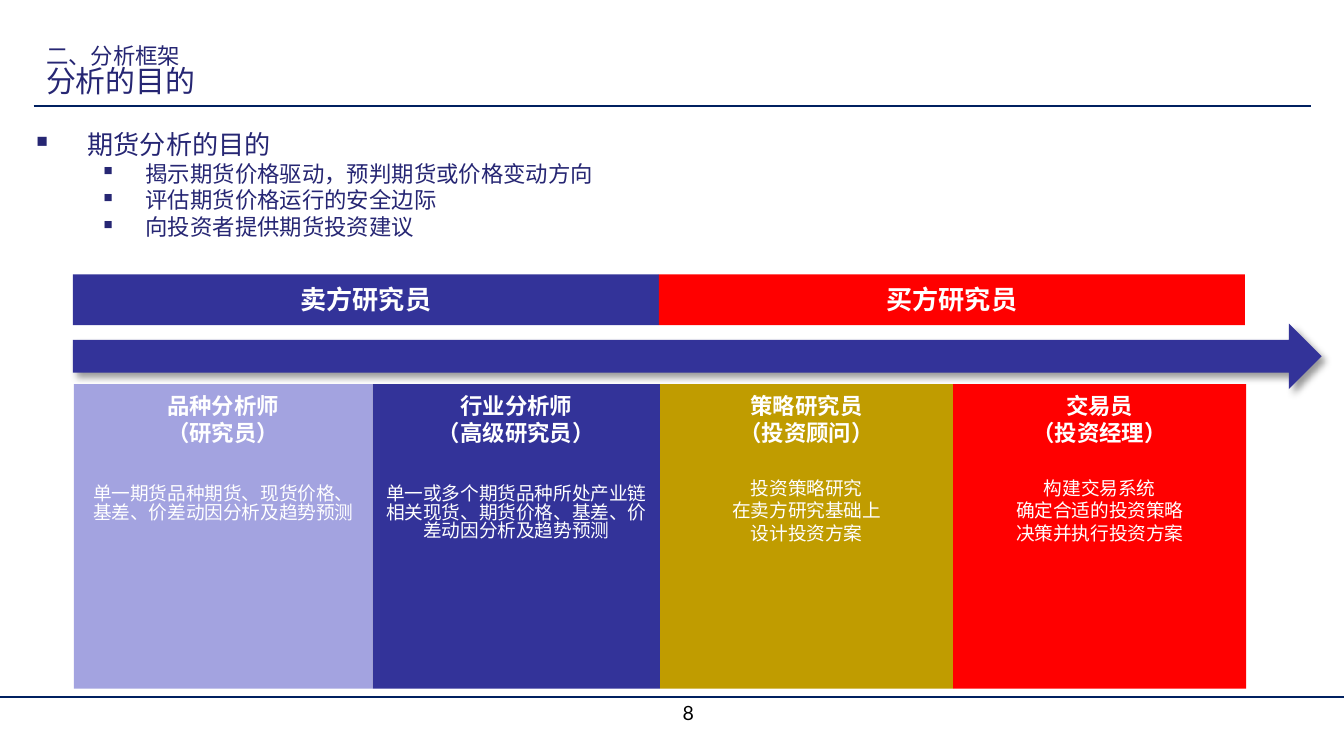
from lxml.etree import SubElement
from pptx import Presentation
from pptx.dml.color import RGBColor
from pptx.enum.shapes import MSO_CONNECTOR as Connector, MSO_SHAPE as Shape
from pptx.enum.text import MSO_ANCHOR as Anchor, PP_ALIGN as Align
from pptx.oxml.ns import qn
from pptx.util import Pt

COLORS = {
    "ink": "262673", "rule": "002060", "indigo": "333399", "lilac": "A3A3E0",
    "gold": "C09C00", "red": "FF0000", "white": "FFFFFF", "black": "000000",
}
FONT = "Noto Sans CJK SC"
LINE_SPACING = 0.83


def style(font, size, color, bold=False, name=FONT):
    font.size, font.bold = Pt(size), bold
    font.color.rgb = RGBColor.from_string(COLORS[color])
    font.name = name
    SubElement(font._rPr, qn("a:ea")).set("typeface", name)


def add_block(kind, left, top, width, height, color):
    block = slide.shapes.add_shape(kind, Pt(left), Pt(top), Pt(width), Pt(height))
    block.shadow.inherit = False
    block.fill.solid()
    block.fill.fore_color.rgb = RGBColor.from_string(COLORS[color])
    block.line.fill.background()
    return block


prs = Presentation()
prs.slide_width, prs.slide_height = Pt(720), Pt(405)
slide = prs.slides.add_slide(prs.slide_layouts[5])

# Rules under the title and above the footer
for start, end, y in [(0, 720, 373.5), (18, 702.5, 56.6)]:
    rule = slide.shapes.add_connector(Connector.STRAIGHT, Pt(start), Pt(y), Pt(end), Pt(y))
    rule.line.width = Pt(1)
    rule.line.color.rgb = RGBColor.from_string(COLORS["rule"])
    SubElement(rule._element.spPr, qn("a:effectLst"))

# Title
title = slide.shapes.title
title.left, title.top, title.width, title.height = Pt(17.5), Pt(10.8), Pt(599), Pt(44.6)
title_frame = title.text_frame
title_frame.vertical_anchor = Anchor.BOTTOM
title_frame.margin_bottom = Pt(2.4)
heading = title_frame.paragraphs[0]
heading.alignment = Align.LEFT
heading.line_spacing = LINE_SPACING
section = heading.add_run()
section.text = "二、分析框架"
style(section.font, 12, "ink")
heading.add_line_break()
topic = heading.add_run()
topic.text = "分析的目的"
style(topic.font, 16, "ink")

# Purposes: text, level
purposes = [
    ("期货分析的目的", 0),
    ("揭示期货价格驱动，预判期货或价格变动方向", 1),
    ("评估期货价格运行的安全边际", 1),
    ("向投资者提供期货投资建议", 1),
]
# Level: size, left margin, hanging indent, bullet percent
levels = [(14, 27.4, 27.4, 60), (12, 58.5, 22.5, 55)]
purpose_frame = slide.shapes.add_textbox(Pt(12.4), Pt(67), Pt(696), Pt(76)).text_frame
purpose_frame.word_wrap = True
purpose_frame.margin_top = Pt(4.6)
for i, (text, level) in enumerate(purposes):
    size, margin, hanging, bullet_size = levels[level]
    purpose = purpose_frame.add_paragraph() if i else purpose_frame.paragraphs[0]
    purpose.text = text
    purpose.level = level
    purpose.line_spacing = LINE_SPACING
    purpose.space_before = Pt(0.2 * size if i else 0)
    props = purpose._p.get_or_add_pPr()
    props.set("marL", str(Pt(margin)))
    props.set("indent", str(-Pt(hanging)))
    SubElement(props, qn("a:buSzPct")).set("val", str(bullet_size * 1000))
    SubElement(props, qn("a:buChar")).set("char", "■")
    style(purpose.font, size, "ink")

# Page number
page_frame = slide.shapes.add_textbox(Pt(293.8), Pt(373.5), Pt(150), Pt(18)).text_frame
page_frame.word_wrap = True
page_frame.vertical_anchor = Anchor.BOTTOM
page = page_frame.paragraphs[0]
page.text = "8"
page.alignment = Align.CENTER
style(page.font, 10.5, "black", name="Lato")

# Career arrow with a soft shadow
career = add_block(Shape.RIGHT_ARROW, 39, 173.4, 669, 35, "indigo")
shadow = SubElement(career._element.spPr.find(qn("a:effectLst")), qn("a:outerShdw"))
for key, value in [("blurRad", Pt(4)), ("dist", Pt(3)), ("dir", 45 * 60000),
                   ("algn", "tl"), ("rotWithShape", 0)]:
    shadow.set(key, str(value))
shadow_color = SubElement(shadow, qn("a:srgbClr"))
shadow_color.set("val", COLORS["black"])
SubElement(shadow_color, qn("a:alpha")).set("val", "40000")

# Sell side and buy side
for i, (text, color) in enumerate([("卖方研究员", "indigo"), ("买方研究员", "red")]):
    side_frame = add_block(Shape.RECTANGLE, 39 + 314 * i, 147, 314, 27.2, color).text_frame
    side_frame.vertical_anchor = Anchor.MIDDLE
    side_frame.margin_left = side_frame.margin_right = side_frame.margin_bottom = 0
    side_frame.margin_top = Pt(2)
    side = side_frame.paragraphs[0]
    side.text = text
    side.alignment = Align.CENTER
    side.line_spacing = LINE_SPACING
    style(side.font, 14, "white", bold=True)

# Roles: width, color, gap above the duties, role lines, duties
roles = [
    (160, "lilac", 21.4, ["品种分析师", "（研究员）"],
     ["单一期货品种期货、现货价格、基差、价差动因分析及趋势预测"]),
    (154, "indigo", 21.4, ["行业分析师", "（高级研究员）"],
     ["单一或多个期货品种所处产业链相关现货、期货价格、基差、价差动因分析及趋势预测"]),
    (157, "gold", 18.6, ["策略研究员", "（投资顾问）"],
     ["投资策略研究", "在卖方研究基础上", "设计投资方案"]),
    (157, "red", 18.6, ["交易员", "（投资经理）"],
     ["构建交易系统", "确定合适的投资策略", "决策并执行投资方案"]),
]
left = 39.6
for width, color, gap, names, duties in roles:
    role_frame = add_block(Shape.RECTANGLE, left, 205.8, width, 163.2, color).text_frame
    left += width
    role_frame.word_wrap = True
    role_frame.vertical_anchor = Anchor.TOP
    role_frame.margin_left = role_frame.margin_right = role_frame.margin_bottom = Pt(5.7)
    role_frame.margin_top = Pt(6.6)
    for i, text in enumerate(names + duties):
        is_name = i < len(names)
        size = 12 if is_name else 10
        line = role_frame.add_paragraph() if i else role_frame.paragraphs[0]
        line.text = text
        line.alignment = Align.CENTER
        line.line_spacing = LINE_SPACING
        if i:
            line.space_before = Pt(gap if i == len(names) else 0.2 * size)
        style(line.font, size, "white", bold=is_name)

prs.save("out.pptx")
